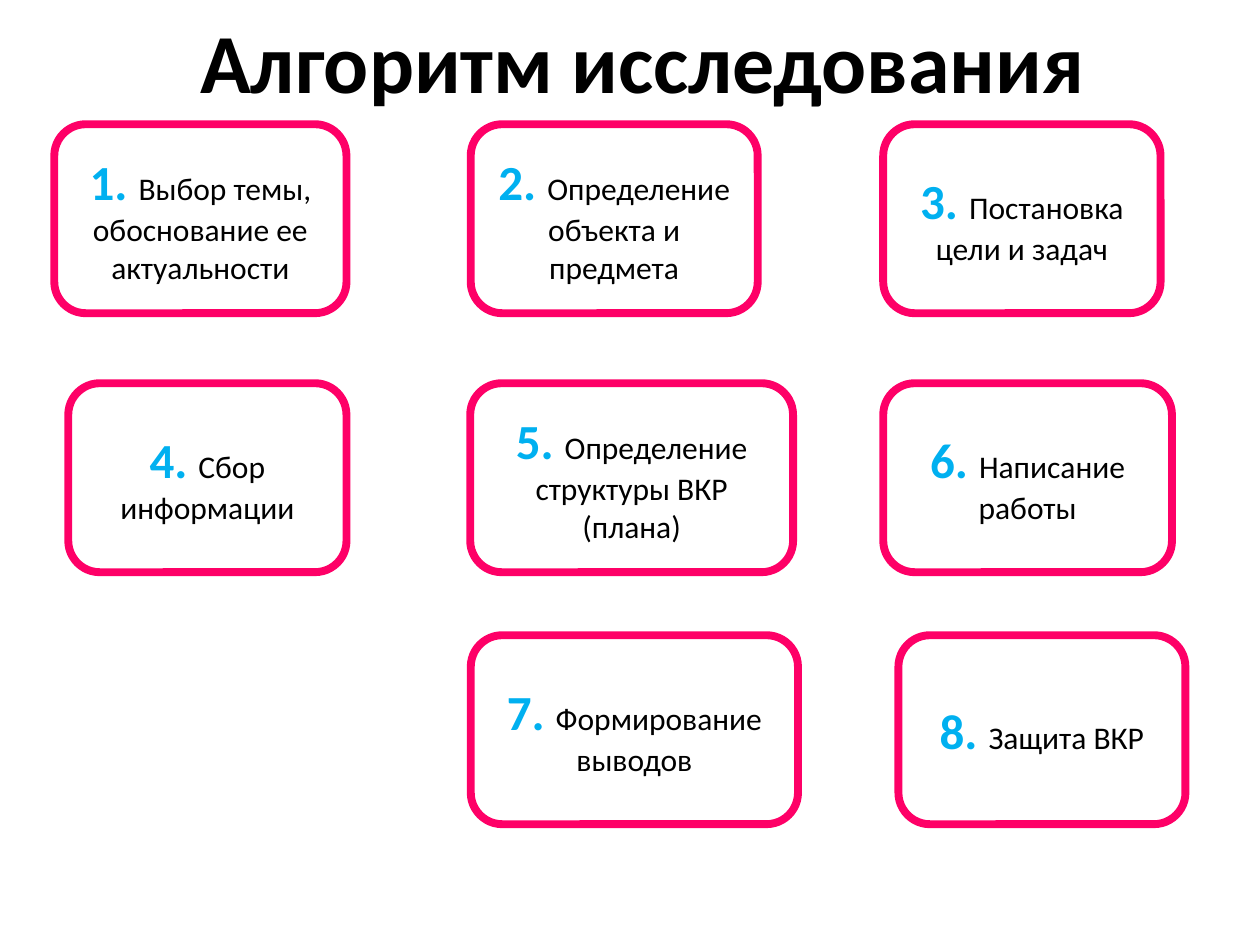
from pptx import Presentation
from pptx.dml.color import RGBColor
from pptx.enum.shapes import MSO_SHAPE
from pptx.enum.text import MSO_ANCHOR, PP_ALIGN
from pptx.util import Pt

BLACK = RGBColor(0x00, 0x00, 0x00)
WHITE = RGBColor(0xFF, 0xFF, 0xFF)
PINK = RGBColor(0xFE, 0x00, 0x67)
BLUE = RGBColor(0x00, 0xB0, 0xF0)
FONT = "Calibri"

STEP_HEIGHT = 108
# Each row: top, then the left, width and text of its steps
ROWS = [
    (71, [(31, 167, "Выбор темы, обоснование ее актуальности"),
          (269, 164, "Определение объекта и предмета"),
          (504.7, 158.5, "Постановка цели и задач")]),
    (219, [(39, 159, "Сбор информации"),
           (268.7, 184.5, "Определение структуры ВКР (плана)"),
           (504.7, 165, "Написание работы")]),
    (363, [(269, 187, "Формирование выводов"),
           (513.4, 164, "Защита ВКР")]),
]


def add_run(p, text, size, color, bold):
    r = p.add_run()
    r.text = text
    r.font.name = FONT
    r.font.size = Pt(size)
    r.font.bold = bold
    r.font.color.rgb = color


def add_title(slide, left, top, width, height):
    tf = slide.shapes.add_textbox(Pt(left), Pt(top), Pt(width), Pt(height)).text_frame
    tf.word_wrap = True
    tf.margin_top = Pt(5.6)
    p = tf.paragraphs[0]
    p.alignment = PP_ALIGN.CENTER
    add_run(p, "Алгоритм исследования", 48, BLACK, True)


def add_step(slide, number, text, left, top, width, height):
    sp = slide.shapes.add_shape(MSO_SHAPE.ROUNDED_RECTANGLE,
                                Pt(left), Pt(top), Pt(width), Pt(height))
    sp.shadow.inherit = False
    sp.fill.solid()
    sp.fill.fore_color.rgb = WHITE
    sp.line.color.rgb = PINK
    sp.line.width = Pt(4.5)
    tf = sp.text_frame
    tf.word_wrap = True
    tf.vertical_anchor = MSO_ANCHOR.MIDDLE
    p = tf.paragraphs[0]
    p.alignment = PP_ALIGN.CENTER
    add_run(p, f"{number}. ", 28, BLUE, True)
    add_run(p, text, 18, BLACK, False)


def add_steps(slide):
    number = 1
    for top, steps in ROWS:
        for left, width, text in steps:
            add_step(slide, number, text, left, top, width, STEP_HEIGHT)
            number += 1


def main():
    prs = Presentation()
    prs.slide_width, prs.slide_height = Pt(720), Pt(540)
    slide = prs.slides.add_slide(prs.slide_layouts[6])
    add_title(slide, 14.4, 0, 705.6, 485)
    add_steps(slide)
    prs.save("out.pptx")


if __name__ == "__main__":
    main()
